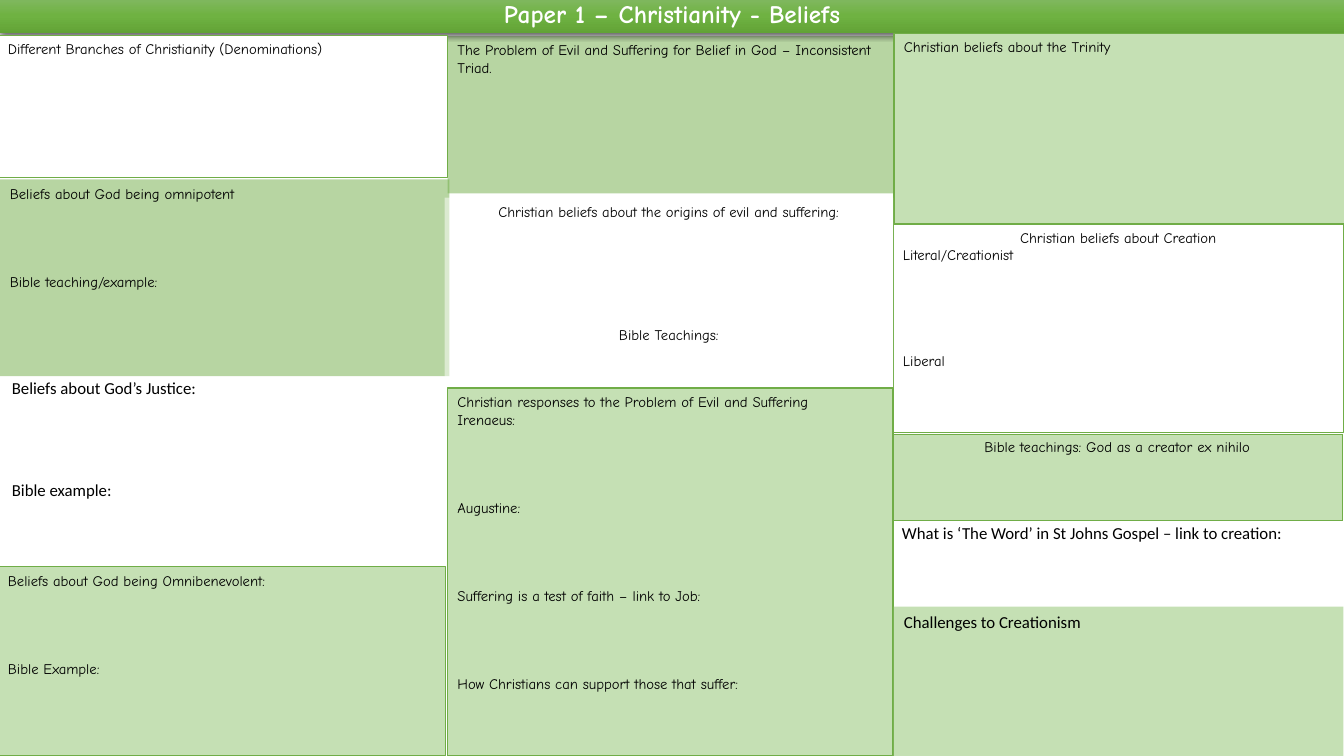
from dataclasses import dataclass
from typing import NamedTuple

from lxml import etree
from pptx import Presentation
from pptx.dml.color import RGBColor
from pptx.enum.shapes import MSO_SHAPE
from pptx.enum.text import MSO_ANCHOR, MSO_AUTO_SIZE, PP_ALIGN
from pptx.oxml import parse_xml
from pptx.oxml.ns import nsdecls, qn
from pptx.util import Pt

RECTANGLE = MSO_SHAPE.RECTANGLE
TOP, MIDDLE = MSO_ANCHOR.TOP, MSO_ANCHOR.MIDDLE
LEFT, CENTER = PP_ALIGN.LEFT, PP_ALIGN.CENTER
NO_AUTOFIT = MSO_AUTO_SIZE.NONE


class Style(NamedTuple):
    font: str
    size: float
    line_height: float


@dataclass(frozen=True)
class Theme:
    green: str = "70AD47"
    pale_green: str = "C5E0B4"
    white: str = "FFFFFF"
    black: str = "000000"
    banner_stops: tuple = ((0, "81B861"), (50, "6FB242"), (100, "62A336"))
    banner_size: float = 18
    prompt: Style = Style("Comic Neue", 10.5, 12.57)
    plain: Style = Style("Calibri", 12, 14.6)


THEME = Theme()


class Prompt(NamedTuple):
    text: str
    space_lines: int = 0  # writing room above the prompt
    align: int = LEFT


def place(shape, box):
    shape.left, shape.top, shape.width, shape.height = map(Pt, box)


def format_font(font, name, size, color, bold=False):
    font.name = name
    font.size = Pt(size)
    font.bold = bold
    font.color.rgb = RGBColor.from_string(color)


def write_prompts(frame, prompts, style):
    frame.word_wrap = True
    frame.text = "\n".join(prompt.text for prompt in prompts)
    for paragraph, prompt in zip(frame.paragraphs, prompts):
        paragraph.alignment = prompt.align
        paragraph.space_before = Pt(prompt.space_lines * style.line_height)
        format_font(paragraph.runs[0].font, style.font, style.size, THEME.black)


def add_panel(slide, box, prompts, fill=None, alpha=None, line=None,
              style=THEME.prompt):
    panel = slide.shapes.add_shape(RECTANGLE, *map(Pt, box))
    panel.shadow.inherit = False
    if fill:
        panel.fill.solid()
        panel.fill.fore_color.rgb = RGBColor.from_string(fill)
    else:
        panel.fill.background()
    if alpha:
        color = panel.element.spPr.find(qn("a:solidFill"))[0]
        etree.SubElement(color, qn("a:alpha"), val=str(alpha * 1000))
    if line:
        panel.line.color.rgb = RGBColor.from_string(THEME.green)
        panel.line.width = Pt(line)
    else:
        panel.line.fill.background()
    panel.text_frame.vertical_anchor = TOP
    write_prompts(panel.text_frame, prompts, style)


def add_note(slide, box, prompts):
    note = slide.shapes.add_textbox(*map(Pt, box))
    write_prompts(note.text_frame, prompts, THEME.plain)


def add_bordered_cell(slide, box, prompts):
    table = slide.shapes.add_table(1, 1, *map(Pt, box)).table
    table.first_row = table.horz_banding = False
    cell = table.cell(0, 0)
    write_prompts(cell.text_frame, prompts, THEME.prompt)
    cell.fill.solid()
    cell.fill.fore_color.rgb = RGBColor.from_string(THEME.pale_green)
    properties = cell.fill._xPr
    for index, side in enumerate(("lnL", "lnR", "lnT", "lnB")):
        properties.insert(index, parse_xml(
            f'<a:{side} {nsdecls("a")} w="{Pt(1)}"><a:solidFill>'
            f'<a:srgbClr val="{THEME.green}"/></a:solidFill></a:{side}>'))


def add_banner(slide, box, text):
    banner = slide.shapes.title
    place(banner, box)
    # Stack the banner above the panels added so far
    banner.element.getparent().append(banner.element)
    stops = "".join(f'<a:gs pos="{position * 1000}"><a:srgbClr val="{color}"/></a:gs>'
                    for position, color in THEME.banner_stops)
    properties = banner.element.spPr
    properties.append(parse_xml(
        f'<a:prstGeom {nsdecls("a")} prst="rect"><a:avLst/></a:prstGeom>'))
    properties.append(parse_xml(
        f'<a:gradFill {nsdecls("a")} rotWithShape="1"><a:gsLst>{stops}</a:gsLst>'
        '<a:lin ang="5400000" scaled="0"/></a:gradFill>'))
    properties.append(parse_xml(
        f'<a:effectLst {nsdecls("a")}><a:outerShdw blurRad="{Pt(4.5)}" '
        f'dist="{Pt(1.5)}" dir="5400000" algn="ctr" rotWithShape="0">'
        f'<a:srgbClr val="{THEME.black}"><a:alpha val="63000"/></a:srgbClr>'
        '</a:outerShdw></a:effectLst>'))
    frame = banner.text_frame
    frame.text = text
    frame.auto_size = NO_AUTOFIT
    frame.vertical_anchor = MIDDLE
    heading = frame.paragraphs[0]
    heading.alignment = CENTER
    heading.line_spacing = 0.9
    format_font(heading.runs[0].font, THEME.prompt.font, THEME.banner_size,
                THEME.white, bold=True)


def main():
    deck = Presentation()
    deck.slide_width, deck.slide_height = Pt(960), Pt(540)
    slide = deck.slides.add_slide(deck.slide_layouts[5])

    # Panels beneath the banner
    add_panel(slide, (319.7, 25.9, 318.2, 112.3), [
        Prompt("The Problem of Evil and Suffering for Belief in God – Inconsistent Triad."),
    ], fill=THEME.green, alpha=50)
    add_panel(slide, (637.9, 159.8, 321.8, 149), [
        Prompt("Christian beliefs about Creation", align=CENTER),
        Prompt("Literal/Creationist"),
        Prompt("Liberal", 5),
    ], line=0.75)

    add_banner(slide, (0, -1.4, 960, 25.2), "Paper 1 – Christianity - Beliefs")

    # Denominations, omnipotence and the Trinity
    add_panel(slide, (-1.4, 25.2, 321.1, 101.5), [
        Prompt("Different Branches of Christianity (Denominations)"),
    ], fill=THEME.white, line=1)
    add_panel(slide, (0, 128.2, 321.1, 140.4), [
        Prompt("Beliefs about God being omnipotent"),
        Prompt("Bible teaching/example:", 4),
    ], fill=THEME.green, alpha=50)
    add_panel(slide, (638.6, 23.8, 321.8, 136.1), [
        Prompt("Christian beliefs about the Trinity"),
    ], fill=THEME.pale_green, line=1)

    # Creation teachings
    add_bordered_cell(slide, (637.2, 310.3, 321.8, 61.2), [
        Prompt("Bible teachings: God as a creator ex nihilo", align=CENTER),
    ])

    # Benevolence, and the origins of and responses to evil
    add_panel(slide, (-1.4, 404.6, 319.7, 135.4), [
        Prompt("Beliefs about God being Omnibenevolent:"),
        Prompt("Bible Example:", 4),
    ], fill=THEME.pale_green, line=0.75)
    add_panel(slide, (317.5, 141.1, 320.4, 138.2), [
        Prompt("Christian beliefs about the origins of evil and suffering:", align=CENTER),
        Prompt("Bible Teachings:", 6, CENTER),
    ], fill=THEME.white, alpha=50)
    add_panel(slide, (319.7, 277.2, 318.2, 262.8), [
        Prompt("Christian responses to the Problem of Evil and Suffering"),
        Prompt("Irenaeus:"),
        Prompt("Augustine:", 4),
        Prompt("Suffering is a test of faith – link to Job:", 4),
        Prompt("How Christians can support those that suffer:", 4),
    ], fill=THEME.pale_green, line=1)

    # The Word, justice and challenges
    add_note(slide, (637.2, 370.1, 321.1, 65.5), [
        Prompt("What is ‘The Word’ in St Johns Gospel – link to creation:"),
    ])
    add_note(slide, (1.4, 266.4, 319, 138.2), [
        Prompt("Beliefs about God’s Justice:"),
        Prompt("Bible example:", 4),
    ])
    add_panel(slide, (638.6, 433.4, 321.1, 108.7), [
        Prompt("Challenges to Creationism"),
    ], fill=THEME.pale_green, style=THEME.plain)

    deck.save("out.pptx")


if __name__ == "__main__":
    main()
